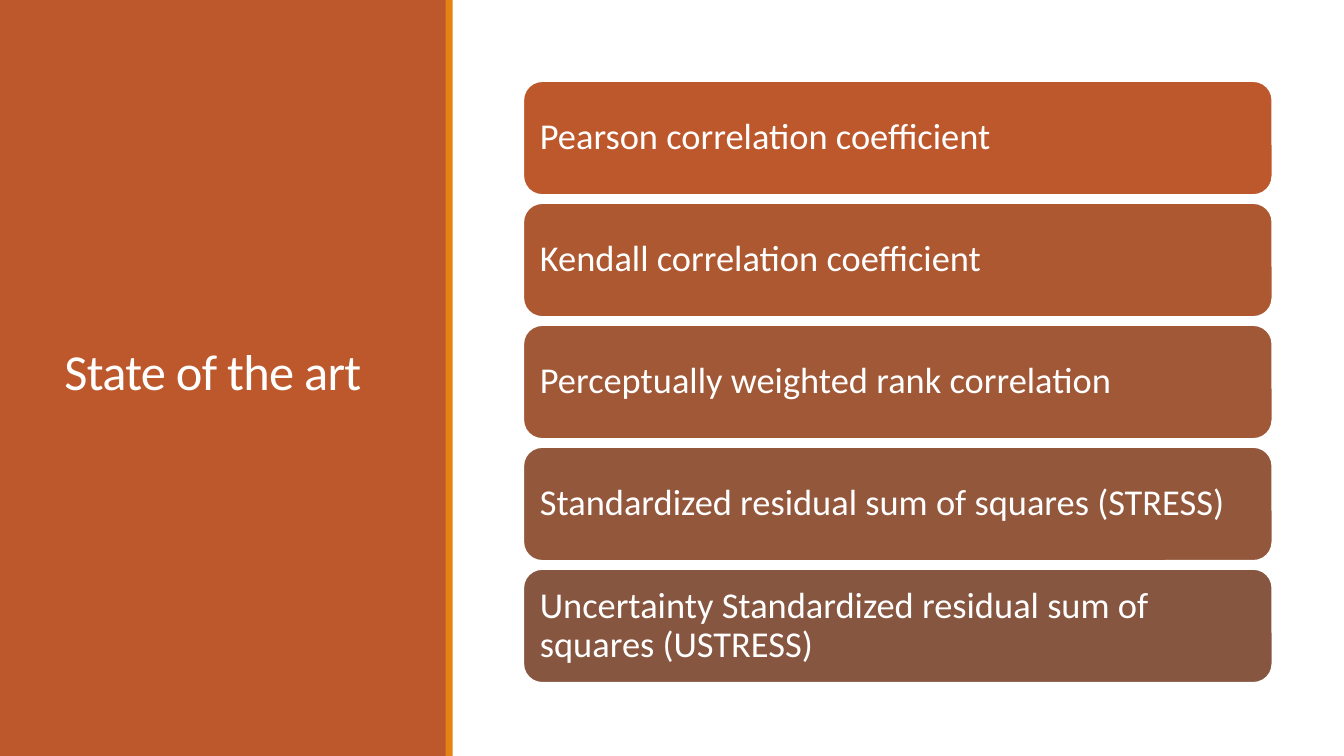
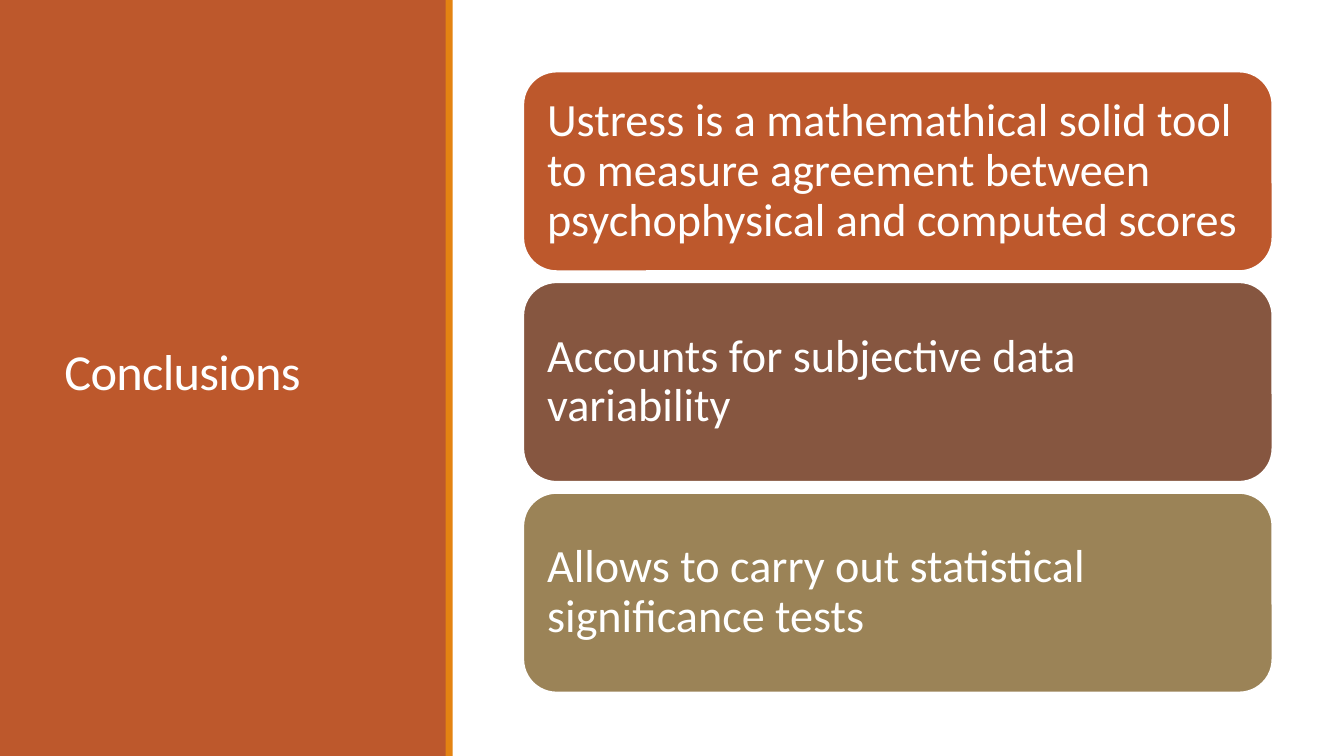
from dataclasses import dataclass

from pptx import Presentation
from pptx.dml.color import RGBColor
from pptx.enum.shapes import MSO_SHAPE
from pptx.enum.text import MSO_ANCHOR, PP_ALIGN
from pptx.util import Inches, Pt

# Shared style
FONT = "Calibri"
WHITE, RUST, AMBER = "FFFFFF", "BD582C", "E48312"
WIDE, HIGH = 13.33, 7.5
LEFT, SPAN, MID = 5.19, 7.43, 3.79  # card column: left, width, centre height


@dataclass
class Card:
    text: str
    fill: str


@dataclass
class Page:
    title: str
    cards: list[Card]
    high: float
    gap: float
    size: float
    inset: float


PAGES = [
    Page("State of the art", [
        Card("Pearson correlation coefficient", RUST),
        Card("Kendall correlation coefficient", "AE5832"),
        Card("Perceptually weighted rank correlation", "A05837"),
        Card("Standardized residual sum of squares (STRESS)", "93573C"),
        Card("Uncertainty Standardized residual sum of squares (USTRESS)", "865640"),
    ], high=1.13, gap=0.08, size=26, inset=0.11),
    Page("Conclusions", [
        Card("Ustress is a mathemathical solid tool to measure agreement "
             "between psychophysical and computed scores", RUST),
        Card("Accounts for subjective data variability", "865640"),
        Card("Allows to carry out statistical significance tests", "9B8357"),
    ], high=1.98, gap=0.11, size=33, inset=0.14),
]


def paint(target, code: str) -> None:
    """Give a fill one solid colour."""
    target.solid()
    target.fore_color.rgb = RGBColor.from_string(code)


def write(shape, text: str, *, size: float, pad: float = 0.1,
          lead: float = 0.9, track: int = 0) -> None:
    """Set left-aligned white text, centred in height."""
    frame = shape.text_frame
    frame.word_wrap = True
    frame.vertical_anchor = MSO_ANCHOR.MIDDLE
    frame.margin_left = frame.margin_right = Inches(pad)
    frame.margin_top = frame.margin_bottom = Inches(pad)
    para = frame.paragraphs[0]
    para.alignment = PP_ALIGN.LEFT
    para.line_spacing = lead
    run = para.add_run()
    run.text = text
    run.font.name = FONT
    run.font.size = Pt(size)
    paint(run.font.fill, WHITE)
    if track:
        run.font._element.set("spc", str(track))


def block(slide, kind, x: float, y: float, w: float, h: float,
          fill: str, edge: str = ""):
    """Draw a filled shape, with a thin edge if a colour is given."""
    shape = slide.shapes.add_shape(kind, Inches(x), Inches(y), Inches(w), Inches(h))
    shape.shadow.inherit = False
    paint(shape.fill, fill)
    if edge:
        paint(shape.line.fill, edge)
        shape.line.width = Pt(1.25)
    else:
        shape.line.fill.background()
    return shape


def panel(slide, title: str) -> None:
    """Draw the side panel, its stripe and the title."""
    block(slide, MSO_SHAPE.RECTANGLE, 0, 0, 4.43, HIGH, RUST)
    box = slide.shapes.add_textbox(Inches(0.54), Inches(0.57), Inches(3.37), Inches(6.31))
    write(box, title, size=36, lead=0.85, track=-50)
    block(slide, MSO_SHAPE.RECTANGLE, 4.42, 0, 0.07, HIGH, AMBER)


def stack(slide, page: Page) -> None:
    """Stack the cards evenly around the centre height."""
    step = page.high + page.gap
    top = MID - (len(page.cards) * step - page.gap) / 2
    for i, card in enumerate(page.cards):
        shape = block(slide, MSO_SHAPE.ROUNDED_RECTANGLE, LEFT, top + i * step,
                      SPAN, page.high, card.fill, WHITE)
        write(shape, card.text, size=page.size, pad=page.inset)


def main() -> None:
    deck = Presentation()
    deck.slide_width, deck.slide_height = Inches(WIDE), Inches(HIGH)
    for page in PAGES:
        slide = deck.slides.add_slide(deck.slide_layouts[6])
        paint(slide.background.fill, WHITE)
        panel(slide, page.title)
        stack(slide, page)
    deck.save("out.pptx")


if __name__ == "__main__":
    main()
